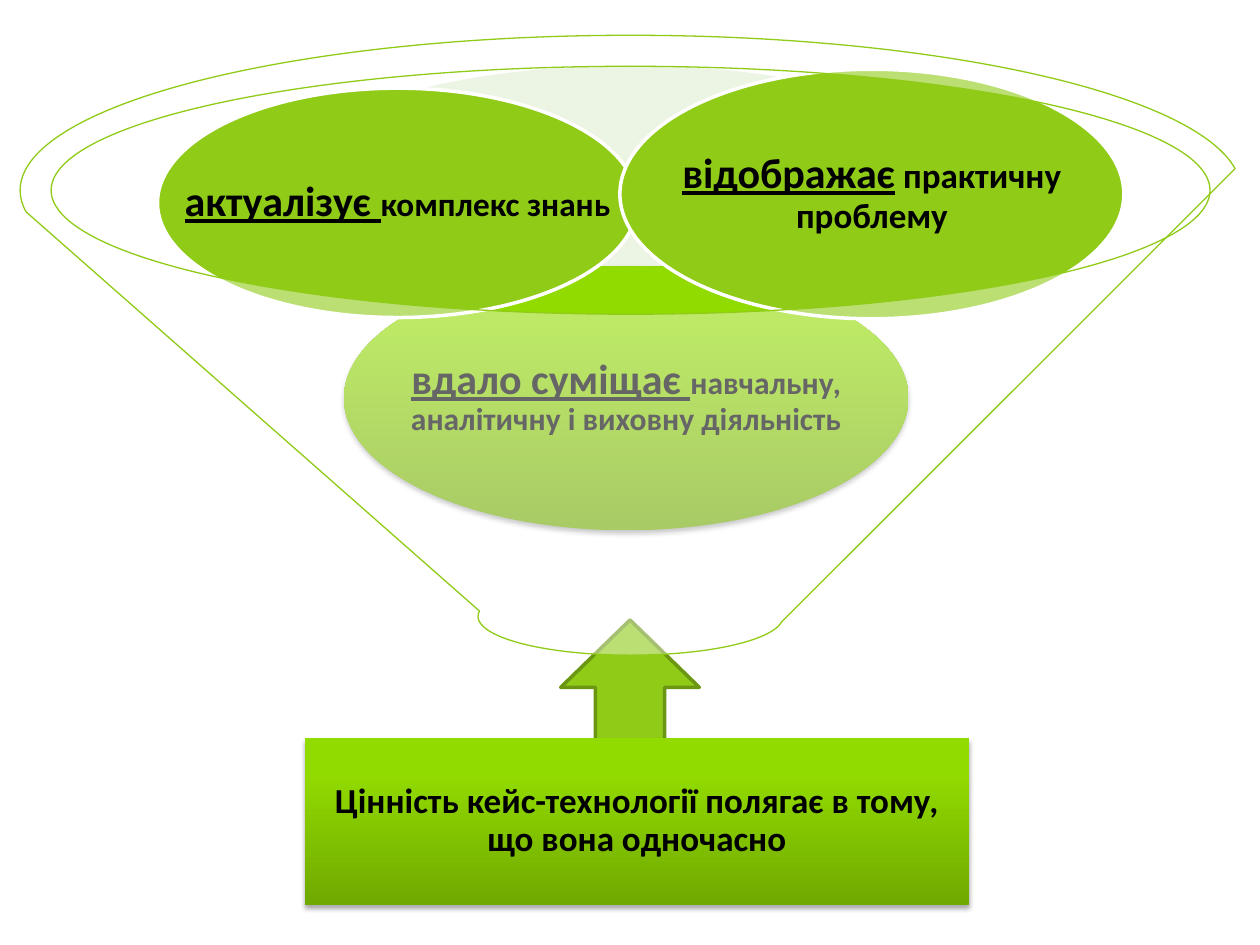
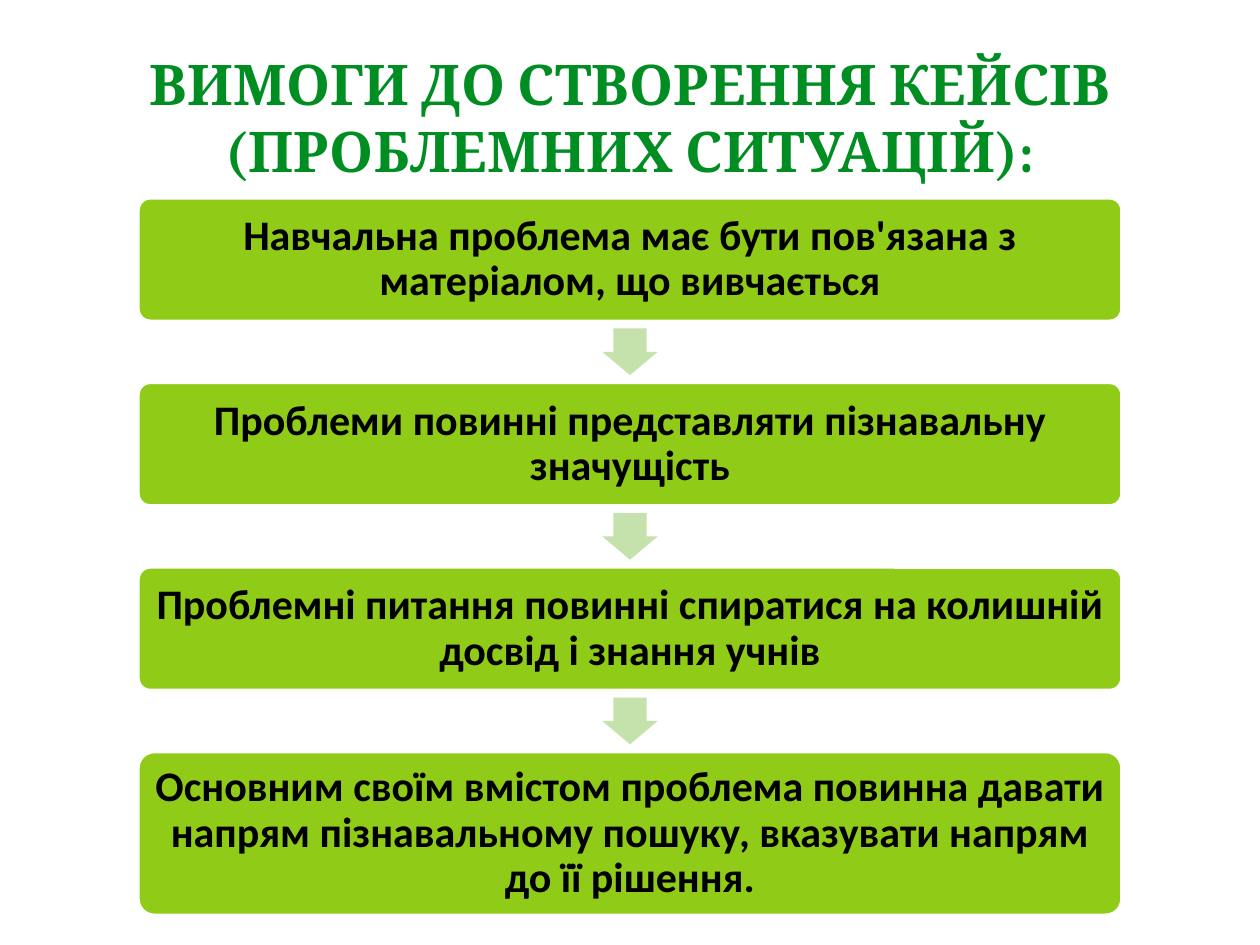
"""Builds two slides on case technology: its value as a funnel, and the rules for creating cases."""
from dataclasses import dataclass

from lxml import etree
from pptx import Presentation
from pptx.dml.color import RGBColor
from pptx.enum.shapes import MSO_SHAPE
from pptx.enum.text import MSO_ANCHOR, PP_ALIGN
from pptx.oxml.ns import qn
from pptx.util import Inches, Pt

ELLIPSE, RECTANGLE, ROUNDED = MSO_SHAPE.OVAL, MSO_SHAPE.RECTANGLE, MSO_SHAPE.ROUNDED_RECTANGLE
DOWN_ARROW, RIGHT_ARROW, FUNNEL = MSO_SHAPE.DOWN_ARROW, MSO_SHAPE.RIGHT_ARROW, MSO_SHAPE.FUNNEL
MIDDLE, CENTER = MSO_ANCHOR.MIDDLE, PP_ALIGN.CENTER

COLUMNS, ROWS = 100, 75
CELL = Inches(0.1)
GREEN, DARK_GREEN, PALE_GREEN, MIST = "8FCB17", "6A9611", "C6E2AC", "D1E7BD"
WHITE, BLACK, TITLE_EDGE = "FFFFFF", "000000", "006919"
GLOSS = ((0, "70A900"), (80, "92DB00"), (100, "93DC00"))
TITLE_GLOSS = ((0, "004711"), (43, "008E22"), (48, "00841F"), (100, "004711"))
BODY_FONT, TITLE_FONT = "Calibri", "Cambria"


@dataclass(frozen=True)
class Area:
    left: float
    top: float
    width: float
    height: float

    def lengths(self) -> tuple[int, ...]:
        return tuple(round(n * CELL) for n in (self.left, self.top, self.width, self.height))


@dataclass(frozen=True)
class Figure:
    kind: int
    area: Area
    fill: str = GREEN
    opacity: int = 100
    line: str = ""
    line_width: float = 2
    rotation: int = 0
    adjustments: tuple[float, ...] = ()
    glossy: bool = False


@dataclass(frozen=True)
class Phrase:
    text: str
    size: float
    underline: bool = False


@dataclass(frozen=True)
class Quality:
    figure: Figure
    phrases: tuple[Phrase, ...]


def rgb(color: str) -> RGBColor:
    return RGBColor.from_string(color)


def element(parent, tag: str, **attributes):
    return etree.SubElement(parent, qn(tag), {key: str(value) for key, value in attributes.items()})


def add_color(parent, color: str, opacity: int = 100) -> None:
    node = element(parent, "a:srgbClr", val=rgb(color))
    if opacity < 100:
        element(node, "a:alpha", val=opacity * 1000)


def set_gradient(properties, stops: tuple, angle: int) -> None:
    gradient = etree.Element(qn("a:gradFill"), rotWithShape="1")
    stop_list = element(gradient, "a:gsLst")
    for position, color in stops:
        add_color(element(stop_list, "a:gs", pos=position * 1000), color)
    element(gradient, "a:lin", ang=angle * 60000, scaled=0)
    properties.replace(properties.find(qn("a:solidFill")), gradient)


def draw_figure(slide, figure: Figure):
    shape = slide.shapes.add_shape(figure.kind, *figure.area.lengths())
    shape.rotation = figure.rotation
    for index, value in enumerate(figure.adjustments):
        shape.adjustments[index] = value
    shape.shadow.inherit = False
    shape.fill.solid()
    shape.fill.fore_color.rgb = rgb(figure.fill)
    properties = shape._element.spPr
    if figure.opacity < 100:
        solid = properties.find(qn("a:solidFill"))
        solid.clear()
        add_color(solid, figure.fill, figure.opacity)
    if figure.line:
        shape.line.color.rgb = rgb(figure.line)
        shape.line.width = Pt(figure.line_width)
    else:
        shape.line.fill.background()
    if figure.glossy:
        set_gradient(properties, GLOSS, 270)
        shadow = element(properties.find(qn("a:effectLst")), "a:outerShdw", blurRad=Pt(3.1),
                         dist=Pt(1.8), dir=90 * 60000, rotWithShape=0)
        add_color(shadow, BLACK, 35)
    return shape


def write(shape, phrases: tuple[Phrase, ...], inset: float,
          font: str = BODY_FONT, spacing: float = 0.9) -> None:
    frame = shape.text_frame
    frame.word_wrap = True
    frame.vertical_anchor = MIDDLE
    frame.margin_left = frame.margin_right = Inches(inset)
    frame.margin_top = frame.margin_bottom = Inches(inset)
    paragraph = frame.paragraphs[0]
    paragraph.alignment = CENTER
    paragraph.line_spacing = spacing
    for phrase in phrases:
        run = paragraph.add_run()
        run.text = phrase.text
        run.font.name, run.font.size, run.font.bold = font, Pt(phrase.size), True
        run.font.underline = phrase.underline
        run.font.color.rgb = rgb(BLACK)


def draw_title(slide, area: Area, title: str) -> None:
    box = slide.shapes.add_textbox(*area.lengths())
    write(box, (Phrase(title, 32),), 0.05, TITLE_FONT, 1)
    properties = box.text_frame.paragraphs[0].runs[0]._r.get_or_add_rPr()
    set_gradient(properties, TITLE_GLOSS, 90)
    outline = etree.Element(qn("a:ln"), w=str(Pt(0.71)))
    add_color(element(outline, "a:solidFill"), TITLE_EDGE)
    properties.insert(0, outline)


def build_value_slide(slide) -> None:
    draw_figure(slide, Figure(ELLIPSE, Area(21.6, 5.2, 56.7, 19.7), MIST, 40))
    draw_figure(slide, Figure(DOWN_ARROW, Area(44.5, 49.2, 11, 10.7), line=DARK_GREEN, rotation=180))
    value = draw_figure(slide, Figure(RECTANGLE, Area(24.2, 58.6, 52.7, 13.2), glossy=True))
    write(value, (Phrase("Цінність кейс-технології полягає в тому, що вона одночасно", 20),), 0.16)
    qualities = (
        Quality(Figure(ELLIPSE, Area(27.3, 21.1, 44.8, 21), glossy=True),
                (Phrase("вдало суміщає ", 24, True),
                 Phrase("навчальну, аналітичну і виховну діяльність", 18))),
        Quality(Figure(ELLIPSE, Area(12.5, 7, 38.1, 18.2), line=WHITE),
                (Phrase("актуалізує ", 24, True), Phrase("комплекс знань", 19))),
        Quality(Figure(ELLIPSE, Area(49.2, 5.5, 40, 19.8), line=WHITE),
                (Phrase("відображає", 24, True), Phrase(" практичну проблему", 20))),
    )
    for quality in qualities:
        draw_figure(slide, quality.figure)
        write(slide.shapes.add_textbox(*quality.figure.area.lengths()), quality.phrases, 0.03)
    draw_figure(slide, Figure(FUNNEL, Area(1.6, 2.8, 96.9, 49.2), WHITE, 40, GREEN, 0.75))


def build_requirements_slide(slide) -> None:
    draw_title(slide, Area(5, 3, 90, 12.5), "ВИМОГИ ДО СТВОРЕННЯ КЕЙСІВ (ПРОБЛЕМНИХ СИТУАЦІЙ):")
    requirements = (
        "Навчальна проблема має бути пов'язана з матеріалом, що вивчається",
        "Проблеми повинні представляти пізнавальну значущість",
        "Проблемні питання повинні спиратися на колишній досвід і знання учнів",
        "Основним своїм вмістом проблема повинна давати напрям пізнавальному пошуку, "
        "вказувати напрям до її рішення.",
    )
    first_top, height, last_height, gap, width = 15.7, 9.8, 13, 4.85, 78.1
    arrow_width, arrow_height = 3.7, 4.4
    last = len(requirements) - 1
    for index, requirement in enumerate(requirements):
        top = first_top + index * (height + gap)
        area = Area((COLUMNS - width) / 2, top, width, last_height if index == last else height)
        step = draw_figure(slide, Figure(ROUNDED, area, line=WHITE, adjustments=(0.1,)))
        write(step, (Phrase(requirement, 24),), 0.1)
        if index < last:
            arrow = Area((COLUMNS - arrow_width) / 2, top + height + (gap - arrow_height) / 2,
                         arrow_width, arrow_height)
            draw_figure(slide, Figure(RIGHT_ARROW, arrow, PALE_GREEN, rotation=90,
                                      adjustments=(0.6, 0.5)))


def main() -> None:
    deck = Presentation()
    deck.slide_width, deck.slide_height = COLUMNS * CELL, ROWS * CELL
    blank = deck.slide_layouts[6]
    for build in (build_value_slide, build_requirements_slide):
        build(deck.slides.add_slide(blank))
    deck.save("out.pptx")


if __name__ == "__main__":
    main()
